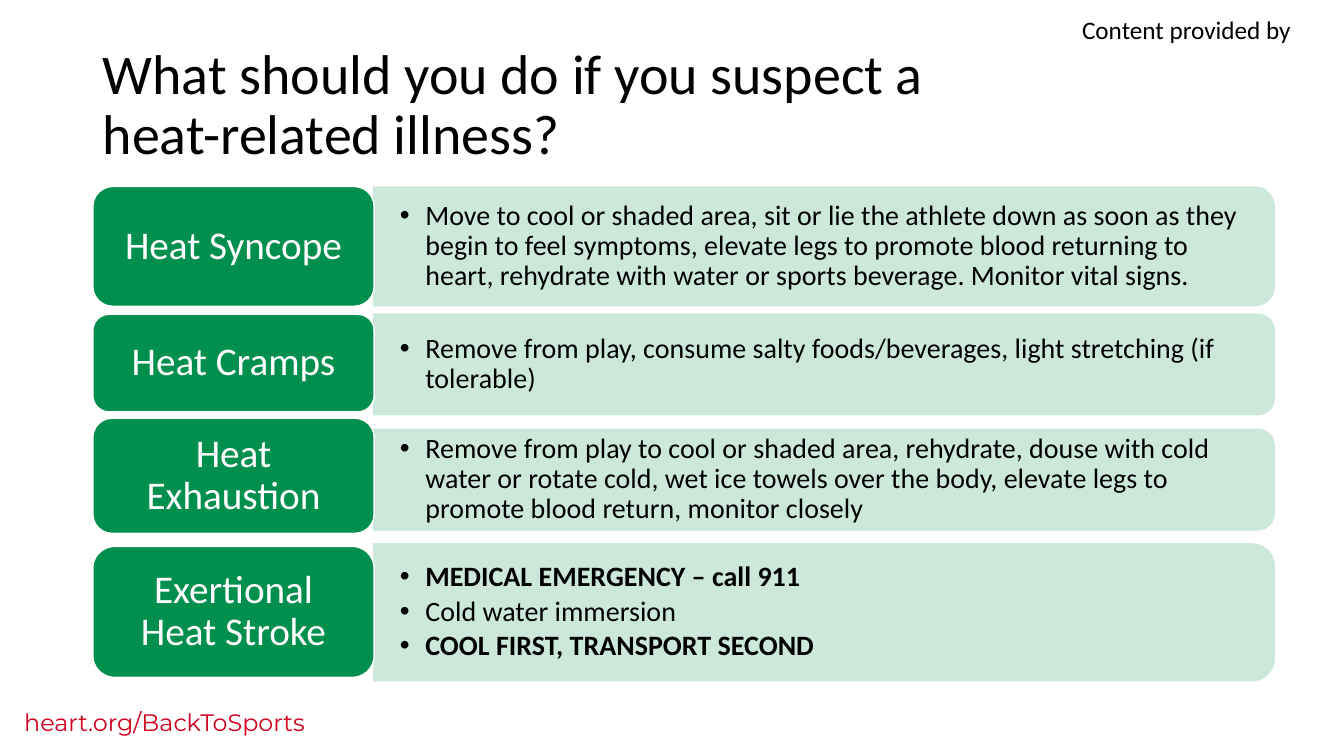
from lxml.etree import SubElement
from pptx import Presentation
from pptx.dml.color import RGBColor
from pptx.enum.shapes import MSO_SHAPE as Shape
from pptx.enum.text import MSO_ANCHOR as Anchor, MSO_AUTO_SIZE as Fit, PP_ALIGN as Align
from pptx.oxml.ns import qn
from pptx.util import Cm, Pt

HUES = {"green": "008F4C", "white": "FFFFFF", "black": "000000", "red": "D0011E"}
LEFT, TAB_W, BAND_X, BAND_W = 2.34, 7.09, 9.4, 22.73

# Tab lines, tab (top, height), band (top, height), bullets as (text, bold)
ROWS = [
    (["Heat Syncope"], (4.7, 3.02), (4.7, 3.02), [
        ("Move to cool or shaded area, sit or lie the athlete down as soon as they "
         "begin to feel symptoms, elevate legs to promote blood returning to heart, "
         "rehydrate with water or sports beverage. Monitor vital signs.", False)]),
    (["Heat Cramps"], (7.92, 2.46), (7.9, 2.57), [
        ("Remove from play, consume salty foods/beverages, light stretching "
         "(if tolerable)", False)]),
    (["Heat Exhaustion"], (10.54, 2.9), (10.8, 2.57), [
        ("Remove from play to cool or shaded area, rehydrate, douse with cold water "
         "or rotate cold, wet ice towels over the body, elevate legs to promote blood "
         "return, monitor closely", False)]),
    (["Exertional", "Heat Stroke"], (13.77, 3.3), (13.69, 3.48), [
        ("MEDICAL EMERGENCY – call 911", True),
        ("Cold water immersion", False),
        ("COOL FIRST, TRANSPORT SECOND", True)]),
]


def tint(name):
    return RGBColor.from_string(HUES[name])


def write(para, text, size, hue, face="Calibri", bold=False):
    run = para.add_run()
    run.text = text
    font = run.font
    font.name, font.size, font.bold = face, Pt(size), bold
    font.color.rgb = tint(hue)


def next_para(frame, index):
    return frame.add_paragraph() if index else frame.paragraphs[0]


def set_frame(frame, side, edge, anchor):
    frame.word_wrap = True
    frame.auto_size = Fit.NONE
    frame.margin_left = frame.margin_right = Cm(side)
    frame.margin_top = frame.margin_bottom = Cm(edge)
    frame.vertical_anchor = anchor


def add_box(slide, left, top, width, height):
    return slide.shapes.add_textbox(Cm(left), Cm(top), Cm(width), Cm(height))


def add_title(slide, left, top, width, height):
    title = slide.shapes.title
    title.left, title.top = Cm(left), Cm(top)
    title.width, title.height = Cm(width), Cm(height)
    set_frame(title.text_frame, 0.25, 0.13, Anchor.TOP)
    para = title.text_frame.paragraphs[0]
    para.alignment, para.line_spacing = Align.LEFT, 0.9
    write(para, "What should you do if you suspect a heat-related illness?", 40, "black")


def add_label(slide, left, top, width, height, text, align, *style):
    frame = add_box(slide, left, top, width, height).text_frame
    set_frame(frame, 0.25, 0.13, Anchor.TOP)
    para = frame.paragraphs[0]
    para.alignment = align
    write(para, text, *style)


def add_bullet(para):
    props = para._p.get_or_add_pPr()
    props.set("marL", str(Cm(0.64)))
    props.set("indent", str(-Cm(0.64)))
    SubElement(props, qn("a:buFont"), typeface="Arial")
    SubElement(props, qn("a:buChar"), char="•")


def add_band(slide, left, top, width, height, items):
    """Pale panel rounded on its right side, with bullets over it."""
    # A quarter turn swaps the sides about the centre
    turn = (width - height) / 2
    panel = slide.shapes.add_shape(Shape.ROUND_2_SAME_RECTANGLE, Cm(left + turn),
                                   Cm(top - turn), Cm(height), Cm(width))
    panel.rotation = 90
    panel.shadow.inherit = False
    panel.fill.solid()
    panel.fill.fore_color.rgb = tint("green")
    hue = panel._element.spPr.find(qn("a:solidFill"))[0]
    SubElement(hue, qn("a:alpha"), val="20000")
    panel.line.fill.background()

    frame = add_box(slide, left, top, width - 0.14, height).text_frame
    set_frame(frame, 0.68, 0.1, Anchor.MIDDLE)
    for index, (text, bold) in enumerate(items):
        para = next_para(frame, index)
        add_bullet(para)
        para.line_spacing = 0.9
        if index:
            para.space_before = Pt(3)
        write(para, text, 20, "black", bold=bold)


def add_tab(slide, left, top, width, height, lines):
    tab = slide.shapes.add_shape(Shape.ROUNDED_RECTANGLE, Cm(left), Cm(top),
                                 Cm(width), Cm(height))
    tab.shadow.inherit = False
    tab.fill.solid()
    tab.fill.fore_color.rgb = tint("green")
    tab.line.color.rgb = tint("white")
    tab.line.width = Pt(1)
    set_frame(tab.text_frame, 0.3, 0.15, Anchor.MIDDLE)
    for index, text in enumerate(lines):
        para = next_para(tab.text_frame, index)
        para.alignment, para.line_spacing = Align.CENTER, 0.9
        write(para, text, 28, "white")


def main():
    deck = Presentation()
    deck.slide_width, deck.slide_height = Cm(33.87), Cm(19.05)
    slide = deck.slides.add_slide(deck.slide_layouts[5])
    add_label(slide, 0.36, 17.7, 11, 0.99, "heart.org/BackToSports",
              Align.LEFT, 17, "red", "Montserrat")
    add_label(slide, 26.37, 0.23, 7.06, 1.02, "Content provided by",
              Align.CENTER, 18, "black")
    add_title(slide, LEFT, 1.02, 24.03, 2.11)
    for lines, (tab_y, tab_h), (band_y, band_h), items in ROWS:
        add_band(slide, BAND_X, band_y, BAND_W, band_h, items)
        add_tab(slide, LEFT, tab_y, TAB_W, tab_h, lines)
    deck.save("out.pptx")


if __name__ == "__main__":
    main()
